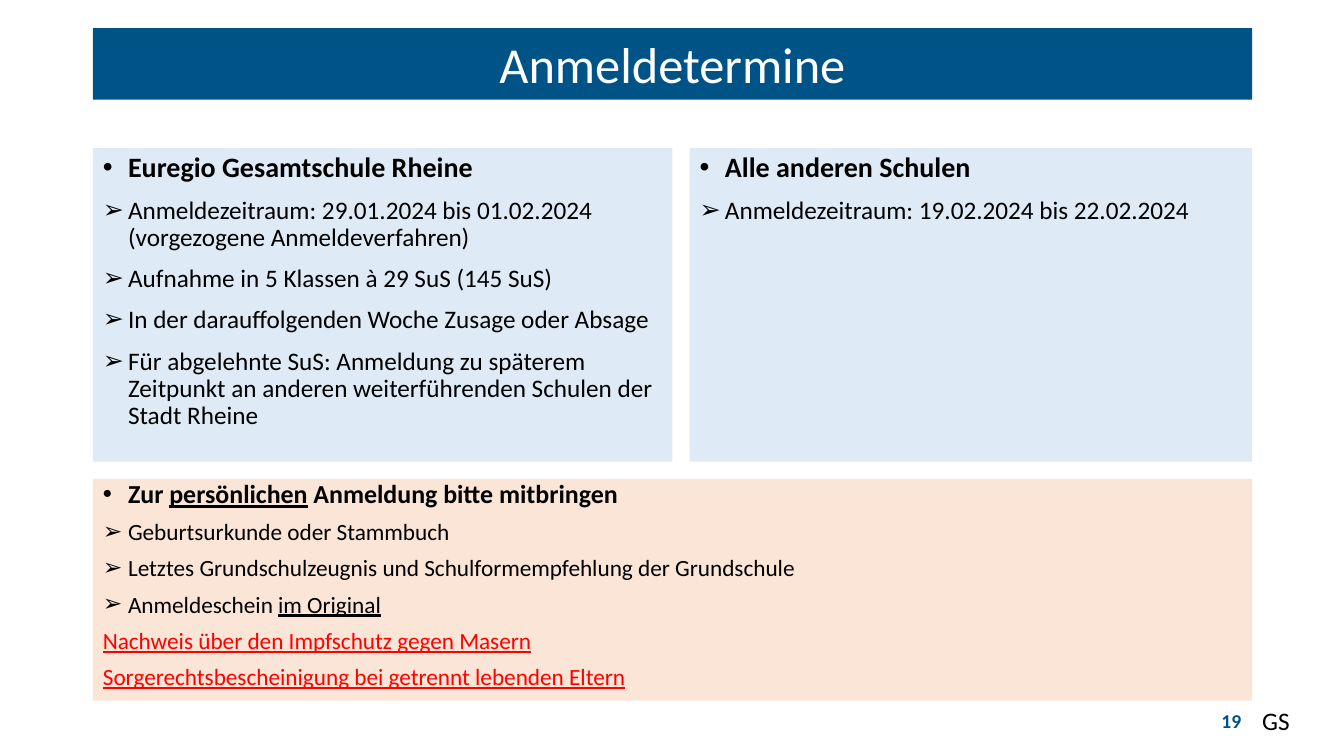
from dataclasses import dataclass

from lxml.etree import SubElement
from pptx import Presentation
from pptx.dml.color import RGBColor
from pptx.enum.text import MSO_ANCHOR as Anchor, MSO_AUTO_SIZE as Fit, PP_ALIGN as Align
from pptx.oxml.ns import qn
from pptx.util import Inches, Pt

BLUE, PALE, PEACH = "005386", "DEEBF7", "FBE5D6"
BLACK, WHITE, RED = "000000", "FFFFFF", "FF0000"
LEFT, WIDE = 0.92, 11.5
DOT, ARROW = "•", "➢"


@dataclass
class Run:
    text: str
    size: float
    color: str = BLACK
    bold: bool = False
    underline: bool = False


@dataclass
class Para:
    runs: list[Run]
    bullet: str = ""
    align: Align = Align.LEFT
    lines: float = 0.9
    before: float = 0


@dataclass
class Box:
    left: float
    top: float
    width: float
    height: float
    paras: list[Para]
    fill: str = ""
    anchor: Anchor = Anchor.TOP


def rgb(color: str) -> RGBColor:
    return RGBColor.from_string(color)


def apply(target, values: dict) -> None:
    for name, value in values.items():
        setattr(target, name, value)


def mark(para, bullet: str) -> None:
    """Set the bullet and its hanging indent, or clear both."""
    props = para._p.get_or_add_pPr()
    hang = Inches(0.25) if bullet else 0
    props.set("marL", str(hang))
    props.set("indent", str(-hang))
    if bullet:
        SubElement(props, qn("a:buFont"), typeface="Arial")
        SubElement(props, qn("a:buChar"), char=bullet)
    else:
        SubElement(props, qn("a:buNone"))


def write(frame, paras: list[Para]) -> None:
    for i, item in enumerate(paras):
        para = frame.add_paragraph() if i else frame.paragraphs[0]
        apply(para, {"alignment": item.align, "line_spacing": item.lines,
                     "space_before": Pt(item.before)})
        mark(para, item.bullet)
        for part in item.runs:
            run = para.add_run()
            run.text = part.text
            apply(run.font, {"name": "Calibri", "size": Pt(part.size),
                             "bold": part.bold, "underline": part.underline})
            run.font.color.rgb = rgb(part.color)


def draw(shape, box: Box) -> None:
    apply(shape, {name: Inches(getattr(box, name))
                  for name in ("left", "top", "width", "height")})
    if box.fill:
        shape.fill.solid()
        shape.fill.fore_color.rgb = rgb(box.fill)
    frame = shape.text_frame
    apply(frame, {"word_wrap": True, "auto_size": Fit.NONE,
                  "vertical_anchor": box.anchor})
    write(frame, box.paras)


def points(head: list[Run], items: list[list[Run]], lines: float = 0.9) -> list[Para]:
    """Build a dotted heading followed by arrow items."""
    rows = [(DOT, head)] + [(ARROW, item) for item in items]
    return [Para(runs, sign, lines=lines, before=10) for sign, runs in rows]


def school(name: str, items: list[str]) -> list[Para]:
    return points([Run(name, 20, bold=True)], [[Run(text, 18)] for text in items])


HEAD, ITEM, TIGHT = 18.5, 16.6, 0.8

title = Box(LEFT, 0.28, WIDE, 0.71,
            [Para([Run("Anmeldetermine", 36, WHITE)], align=Align.CENTER)],
            BLUE, Anchor.BOTTOM)
early = Box(LEFT, 1.47, 5.75, 3.11, school("Euregio Gesamtschule Rheine", [
    "Anmeldezeitraum: 29.01.2024 bis 01.02.2024 (vorgezogene Anmeldeverfahren)",
    "Aufnahme in 5 Klassen à 29 SuS (145 SuS)",
    "In der darauffolgenden Woche Zusage oder Absage",
    "Für abgelehnte SuS: Anmeldung zu späterem Zeitpunkt an anderen "
    "weiterführenden Schulen der Stadt Rheine",
]), PALE)
others = Box(6.84, 1.47, 5.58, 3.11, school("Alle anderen Schulen", [
    "Anmeldezeitraum: 19.02.2024 bis 22.02.2024",
]), PALE)
papers = points(
    [Run("Zur ", HEAD, bold=True),
     Run("persönlichen", HEAD, bold=True, underline=True),
     Run(" Anmeldung bitte mitbringen", HEAD, bold=True)],
    [[Run("Geburtsurkunde oder Stammbuch", ITEM)],
     [Run("Letztes Grundschulzeugnis und Schulformempfehlung der Grundschule", ITEM)],
     [Run("Anmeldeschein ", ITEM), Run("im Original", ITEM, underline=True)]],
    TIGHT)
proofs = [Para([Run(text, ITEM, RED, underline=True)], lines=TIGHT, before=10)
          for text in ("Nachweis über den Impfschutz gegen Masern",
                       "Sorgerechtsbescheinigung bei getrennt lebenden Eltern")]
bring = Box(LEFT, 4.75, WIDE, 2.2, papers + proofs, PEACH)
number = Box(11.95, 6.95, 0.46, 0.4,
             [Para([Run("19", 14, BLUE, bold=True)], align=Align.RIGHT, lines=1.0)],
             anchor=Anchor.MIDDLE)
initials = Box(12.42, 6.95, 0.9, 0.4, [Para([Run("GS", 18)], lines=1.0)])


def main() -> None:
    deck = Presentation()
    apply(deck, {"slide_width": Inches(13.33), "slide_height": Inches(7.5)})
    slide = deck.slides.add_slide(deck.slide_layouts.get_by_name("Comparison"))
    holders = {item.placeholder_format.idx: item for item in slide.placeholders}
    for key, box in {0: title, 2: early, 4: others, 1: bring}.items():
        draw(holders.pop(key), box)
    for spare in holders.values():
        spare.element.getparent().remove(spare.element)
    for box in (number, initials):
        draw(slide.shapes.add_textbox(0, 0, 0, 0), box)
    deck.save("out.pptx")


if __name__ == "__main__":
    main()
